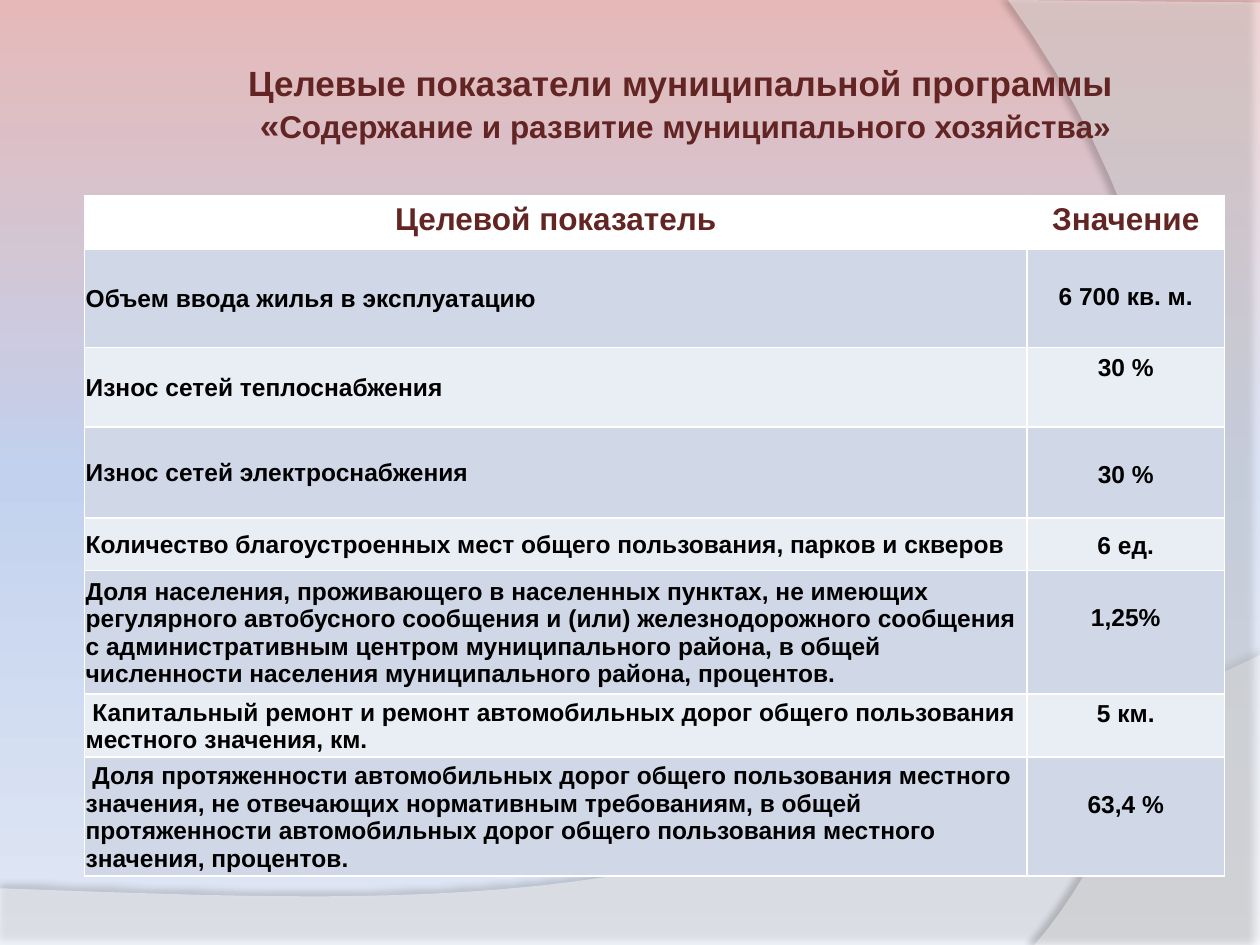
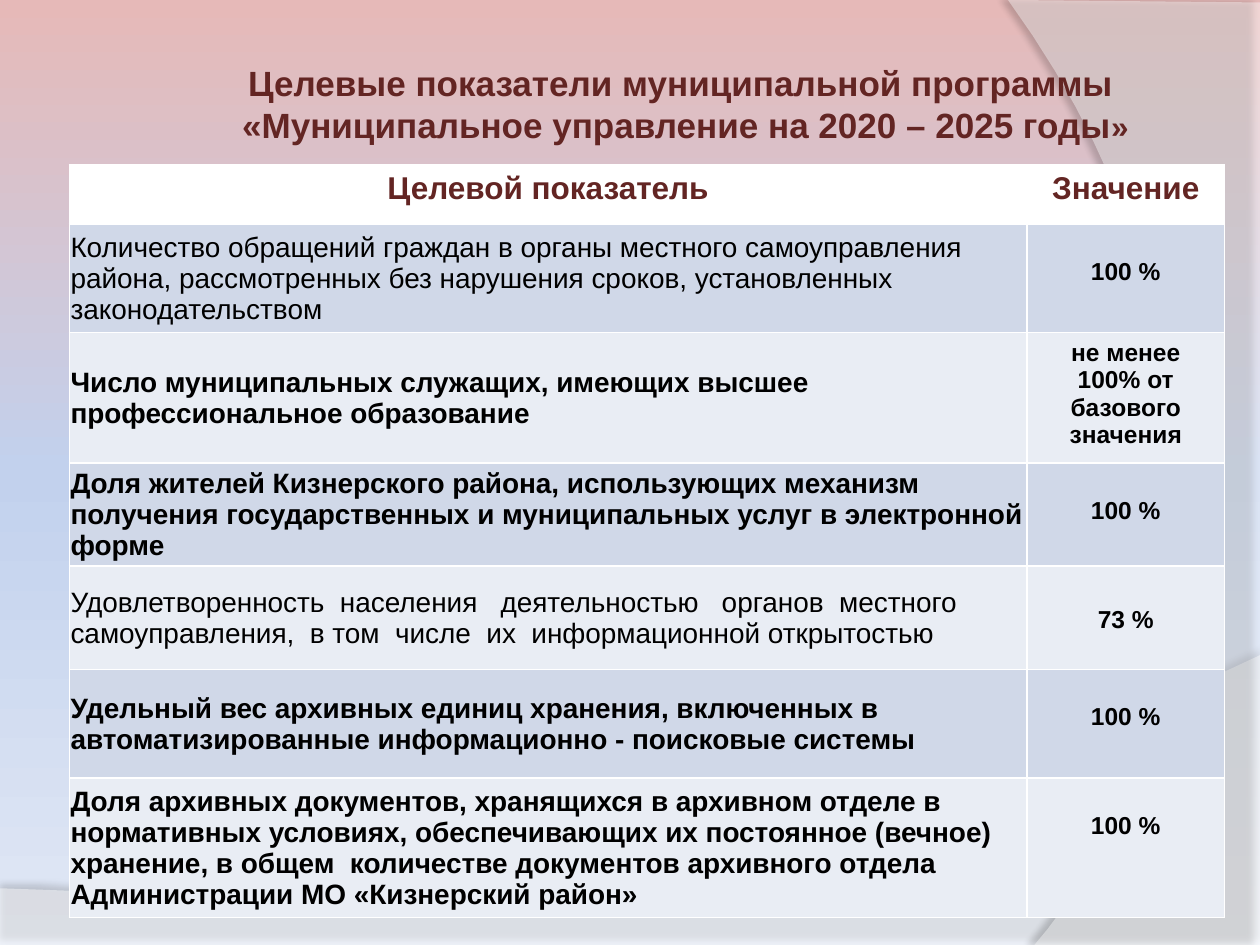
from copy import deepcopy
from dataclasses import dataclass
from enum import Enum

from lxml.etree import SubElement
from pptx import Presentation
from pptx.dml.color import RGBColor
from pptx.enum.text import MSO_ANCHOR, PP_ALIGN
from pptx.oxml.ns import qn
from pptx.util import Inches, Pt

COLORS = {
    "title": "632523", "text": "000000", "white": "FFFFFF",
    "band_dark": "D0D8E8", "band_light": "E9EDF4",
    "bg_top": "E6B9B8", "bg_middle": "C2D1ED", "bg_bottom": "E1E8F5",
}
FONT = "Arial"
VALUE_SIZE = 14
VALUE_WIDTH = 1.57
TITLE_LINE = "Целевые показатели муниципальной программы "
HEADERS = ("Целевой показатель", "Значение")
CURVE_STEPS = 32


class Place(Enum):
    TOP = 0.05
    LOWERED = 0.27
    MIDDLE = 0.0


@dataclass
class Run:
    text: str
    size: int
    bold: bool = True
    color: str = "title"


@dataclass
class Indicator:
    name: str
    value: str
    height: float
    place: Place = Place.LOWERED
    bold: bool = True


@dataclass
class Program:
    title: list[Run]
    left: float
    top: float
    name_width: float
    name_size: int
    header_height: float
    indicators: list[Indicator]


@dataclass
class Wave:
    """A translucent outline: straight points, then one Bezier curve from the last point."""
    points: list[tuple[float, float]]
    curve: list[tuple[float, float]]
    opacity: int
    shadow_opacity: int
    shadow_distance: float
    shadow_angle: int


WAVES = [
    Wave([(0, 7.05), (0, 7.5), (10, 7.5), (10, 5.2)],
         [(5.59, 7.29), (3.91, 7.19), (0, 7.05)], 45, 35, 3.5, 270),
    Wave([(8, 0), (10, 0.02), (10, 7.5), (8.21, 7.5)],
         [(9.35, 6.19), (10.18, 3), (8, 0)], 40, 45, 4, 180),
]

PROGRAMS = [
    Program(
        [Run("«", 20), Run("Содержание и развитие муниципального хозяйства»", 18)],
        0.67, 1.55, 7.48, 14, 0.43,
        [
            Indicator("Объем ввода жилья в эксплуатацию", "6 700 кв. м.", 0.78),
            Indicator("Износ сетей теплоснабжения", "30 %", 0.63, Place.TOP),
            Indicator("Износ сетей электроснабжения", "30 %", 0.72),
            Indicator("Количество благоустроенных мест общего пользования, парков "
                      "и скверов", "6 ед.", 0.42, Place.MIDDLE),
            Indicator("Доля населения, проживающего в населенных пунктах, не имеющих "
                      "регулярного автобусного сообщения и (или) железнодорожного "
                      "сообщения с административным центром муниципального района, "
                      "в общей численности населения муниципального района, "
                      "процентов.", "1,25%", 0.98),
            Indicator(" Капитальный ремонт и ремонт автомобильных дорог общего "
                      "пользования местного значения, км.", "5 км.", 0.5, Place.TOP),
            Indicator(" Доля протяженности автомобильных дорог общего пользования "
                      "местного значения, не отвечающих нормативным требованиям, "
                      "в общей протяженности автомобильных дорог общего пользования "
                      "местного значения, процентов.", "63,4 %", 0.94),
        ]),
    Program(
        [Run("«Муниципальное управление на 2020 – 2025 годы", 20), Run("»", 18)],
        0.55, 1.31, 7.6, 16, 0.47,
        [
            Indicator("Количество обращений граждан в органы местного самоуправления "
                      "района, рассмотренных без нарушения сроков, установленных "
                      "законодательством", "100 %", 0.86, bold=False),
            Indicator("Число муниципальных служащих, имеющих высшее профессиональное "
                      "образование", "не менее 100% от базового значения", 1.03,
                      Place.TOP),
            Indicator("Доля жителей Кизнерского района, использующих механизм "
                      "получения государственных и муниципальных услуг в электронной "
                      "форме", "100 %", 0.82),
            Indicator("Удовлетворенность  населения   деятельностью   органов  местного "
                      "самоуправления,  в том  числе  их  информационной открытостью",
                      "73 %", 0.82, Place.MIDDLE, bold=False),
            Indicator("Удельный вес архивных единиц хранения, включенных в "
                      "автоматизированные информационно - поисковые системы",
                      "100 %", 0.86),
            Indicator("Доля архивных документов, хранящихся в архивном отделе в "
                      "нормативных условиях, обеспечивающих их постоянное (вечное) "
                      "хранение, в общем  количестве документов архивного отдела "
                      "Администрации МО «Кизнерский район»", "100 %", 1.11),
        ]),
]


def rgb(name: str) -> RGBColor:
    return RGBColor.from_string(COLORS[name])


def set_background(master) -> None:
    fill = master.background.fill
    fill.gradient()
    stops = master.element.find(".//" + qn("a:gsLst"))
    stops.append(deepcopy(stops[0]))
    names = ("bg_top", "bg_middle", "bg_bottom")
    for i, (stop, name) in enumerate(zip(fill.gradient_stops, names)):
        stop.position = i / 2
        stop.color.rgb = rgb(name)
    fill.gradient_angle = 270


def bezier(points: list[tuple[float, float]], t: float) -> tuple[float, float]:
    """Point at t, by repeated interpolation between neighbours."""
    while len(points) > 1:
        points = [(a[0] + (b[0] - a[0]) * t, a[1] + (b[1] - a[1]) * t)
                  for a, b in zip(points, points[1:])]
    return points[0]


def add_alpha(color, percent: int) -> None:
    SubElement(color, qn("a:alpha")).set("val", str(percent * 1000))


def add_wave(s, wave: Wave) -> None:
    control = [wave.points[-1], *wave.curve]
    outline = wave.points + [bezier(control, i / CURVE_STEPS)
                             for i in range(1, CURVE_STEPS + 1)]
    vertices = [(Inches(x), Inches(y)) for x, y in outline]
    builder = s.shapes.build_freeform(*vertices[0])
    builder.add_line_segments(vertices[1:], close=True)
    shape = builder.convert_to_shape()
    shape.line.fill.background()
    shape.fill.solid()
    shape.fill.fore_color.rgb = rgb("white")
    shape.shadow.inherit = False
    props = shape.element.spPr
    add_alpha(props.find(qn("a:solidFill"))[0], wave.opacity)
    shadow = SubElement(props.find(qn("a:effectLst")), qn("a:outerShdw"),
                        blurRad=str(Pt(4)), dist=str(Pt(wave.shadow_distance)),
                        dir=str(wave.shadow_angle * 60000), algn="ctr", rotWithShape="0")
    color = SubElement(shadow, qn("a:srgbClr"), val=COLORS["text"])
    add_alpha(color, wave.shadow_opacity)


def add_runs(p, runs: list[Run], align=PP_ALIGN.CENTER) -> None:
    p.alignment = align
    for run in runs:
        r = p.add_run()
        r.text = run.text
        r.font.name = FONT
        r.font.size = Pt(run.size)
        r.font.bold = run.bold
        r.font.color.rgb = rgb(run.color)


def add_title(s, runs: list[Run]) -> None:
    tf = s.shapes.add_textbox(Inches(0.43), Inches(0.44),
                              Inches(10.02), Inches(0.77)).text_frame
    tf.word_wrap = True
    add_runs(tf.paragraphs[0], [Run(TITLE_LINE, 20)])
    add_runs(tf.add_paragraph(), runs)


def style_cell(cell, fill: str) -> None:
    props = cell._tc.get_or_add_tcPr()
    for side in ("lnL", "lnR", "lnT", "lnB"):
        line = SubElement(props, qn(f"a:{side}"), w=str(Pt(1)))
        SubElement(SubElement(line, qn("a:solidFill")), qn("a:srgbClr"),
                   val=COLORS["white"])
    cell.fill.solid()
    cell.fill.fore_color.rgb = rgb(fill)


def fill_name(cell, indicator: Indicator, size: int) -> None:
    cell.vertical_anchor = MSO_ANCHOR.MIDDLE
    cell.margin_left = cell.margin_right = cell.margin_top = Inches(0.01)
    cell.margin_bottom = 0
    run = Run(indicator.name, size, indicator.bold, "text")
    add_runs(cell.text_frame.paragraphs[0], [run], PP_ALIGN.LEFT)


def fill_value(cell, indicator: Indicator) -> None:
    p = cell.text_frame.paragraphs[0]
    cell.margin_top = Inches(indicator.place.value)
    if indicator.place is Place.MIDDLE:
        cell.vertical_anchor = MSO_ANCHOR.MIDDLE
        cell.margin_left = cell.margin_right = Inches(0.07)
        cell.margin_bottom = 0
        p.line_spacing = 1.15
    add_runs(p, [Run(indicator.value, VALUE_SIZE, color="text")])


def add_indicator_table(s, program: Program) -> None:
    heights = [program.header_height, *(i.height for i in program.indicators)]
    widths = [program.name_width, VALUE_WIDTH]
    table = s.shapes.add_table(len(heights), len(widths), Inches(program.left),
                               Inches(program.top), Inches(sum(widths)),
                               Inches(sum(heights))).table
    for column, width in zip(table.columns, widths):
        column.width = Inches(width)
    for i, (row, height) in enumerate(zip(table.rows, heights)):
        row.height = Inches(height)
        fill = "white" if i == 0 else "band_dark" if i % 2 else "band_light"
        for cell in row.cells:
            style_cell(cell, fill)
    for cell, header in zip(table.rows[0].cells, HEADERS):
        add_runs(cell.text_frame.paragraphs[0], [Run(header, 18)])
    for i, indicator in enumerate(program.indicators, 1):
        fill_name(table.cell(i, 0), indicator, program.name_size)
        fill_value(table.cell(i, 1), indicator)


def main() -> None:
    prs = Presentation()
    prs.slide_width, prs.slide_height = Inches(10), Inches(7.5)
    set_background(prs.slide_master)
    for program in PROGRAMS:
        s = prs.slides.add_slide(prs.slide_layouts[6])
        for wave in WAVES:
            add_wave(s, wave)
        add_title(s, program.title)
        add_indicator_table(s, program)
    prs.save("out.pptx")


if __name__ == "__main__":
    main()
